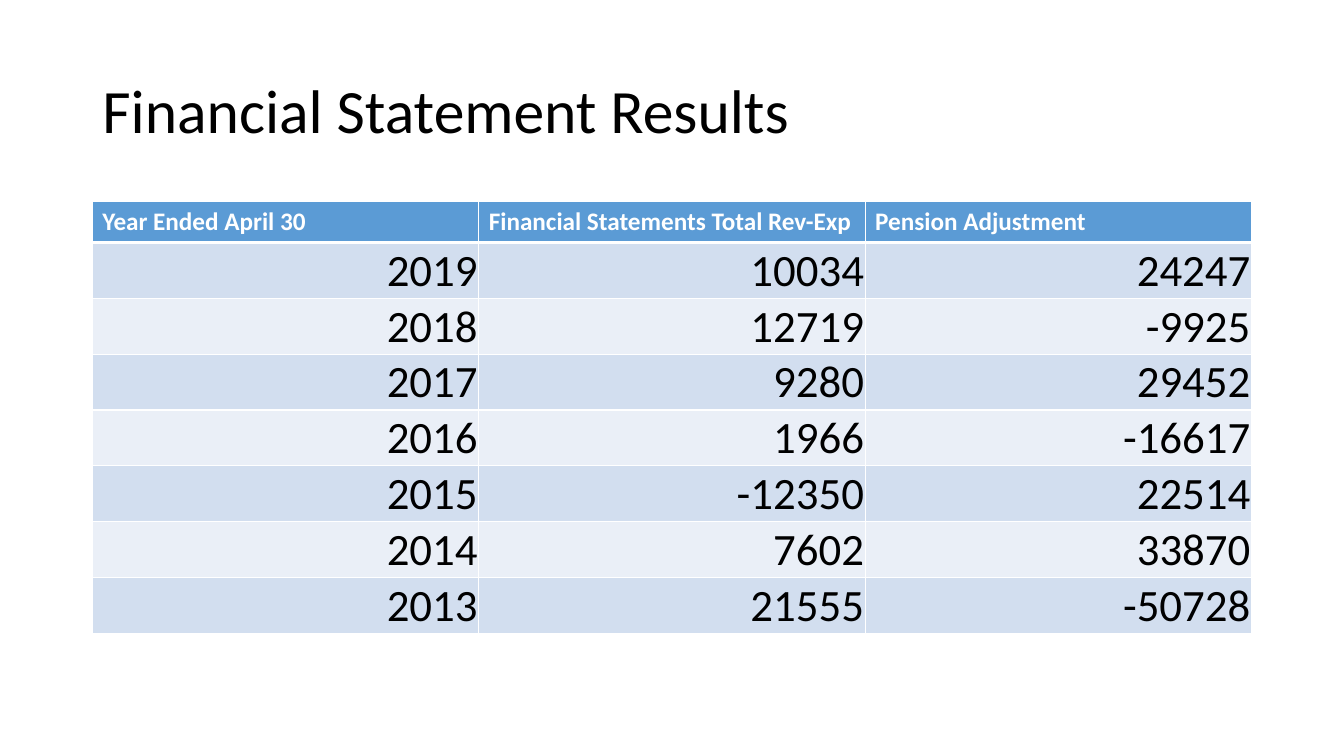
from lxml.etree import SubElement
from pptx import Presentation
from pptx.dml.color import RGBColor
from pptx.enum.text import MSO_ANCHOR as Anchor, PP_ALIGN as Align
from pptx.oxml.ns import qn
from pptx.util import Pt

# Content
TITLE = "Financial Statement Results"
HEADINGS = ("Year Ended April 30", "Financial Statements Total Rev-Exp", "Pension Adjustment")
RESULTS = [
    (2019, 10034, 24247),
    (2018, 12719, -9925),
    (2017, 9280, 29452),
    (2016, 1966, -16617),
    (2015, -12350, 22514),
    (2014, 7602, 33870),
    (2013, 21555, -50728),
]

# Style
FONT = "Calibri"
BLACK = RGBColor(0x00, 0x00, 0x00)
WHITE = RGBColor(0xFF, 0xFF, 0xFF)
HEADER_BLUE = RGBColor(0x5B, 0x9B, 0xD5)
BANDS = (RGBColor(0xD2, 0xDE, 0xEF), RGBColor(0xEA, 0xEF, 0xF7))

# Layout: title and table share the left edge and width; rows grow to fit the figures
LEFT, WIDTH = 66, 828
TITLE_TOP, TITLE_HEIGHT = 28.75, 104.4
TABLE_TOP, ROW_HEIGHT = 144, 29.2


def add_text(paragraph, text, size, color, bold=False):
    run = paragraph.add_run()
    run.text = text
    run.font.name = FONT
    run.font.size = Pt(size)
    run.font.bold = bold
    run.font.color.rgb = color


def set_borders(cell, bottom):
    properties = cell._tc.get_or_add_tcPr()
    widths = {"a:lnL": 1, "a:lnR": 1, "a:lnT": 1, "a:lnB": bottom}
    for index, (side, width) in enumerate(widths.items()):
        line = SubElement(properties, qn(side), w=str(Pt(width)))
        color = SubElement(SubElement(line, qn("a:solidFill")), qn("a:srgbClr"))
        color.set("val", str(WHITE))
        properties.insert(index, line)  # borders come before the fill


def fill_cell(cell, color, bottom=1):
    cell.fill.solid()
    cell.fill.fore_color.rgb = color
    set_borders(cell, bottom)


def main():
    deck = Presentation()
    deck.slide_width, deck.slide_height = Pt(960), Pt(540)
    slide = deck.slides.add_slide(deck.slide_layouts[5])

    # Title
    title = slide.shapes.title
    title.left, title.top = Pt(LEFT), Pt(TITLE_TOP)
    title.width, title.height = Pt(WIDTH), Pt(TITLE_HEIGHT)
    title.text_frame.vertical_anchor = Anchor.MIDDLE
    heading = title.text_frame.paragraphs[0]
    heading.alignment = Align.LEFT
    heading.line_spacing = 0.9
    add_text(heading, TITLE, 44, BLACK)

    # Table
    row_count = len(RESULTS) + 1
    table = slide.shapes.add_table(
        row_count, len(HEADINGS),
        Pt(LEFT), Pt(TABLE_TOP), Pt(WIDTH), Pt(ROW_HEIGHT * row_count),
    ).table

    # Header row
    for column, label in enumerate(HEADINGS):
        cell = table.cell(0, column)
        fill_cell(cell, HEADER_BLUE, bottom=3)
        add_text(cell.text_frame.paragraphs[0], label, 18, WHITE, bold=True)

    # Yearly results in alternating bands
    for row, result in enumerate(RESULTS, start=1):
        for column, value in enumerate(result):
            cell = table.cell(row, column)
            fill_cell(cell, BANDS[(row - 1) % 2])
            cell.vertical_anchor = Anchor.BOTTOM
            cell.margin_left = cell.margin_right = cell.margin_top = Pt(0.75)
            cell.margin_bottom = Pt(0)
            figure = cell.text_frame.paragraphs[0]
            figure.alignment = Align.RIGHT
            add_text(figure, str(value), 32, BLACK)

    deck.save("out.pptx")


if __name__ == "__main__":
    main()
